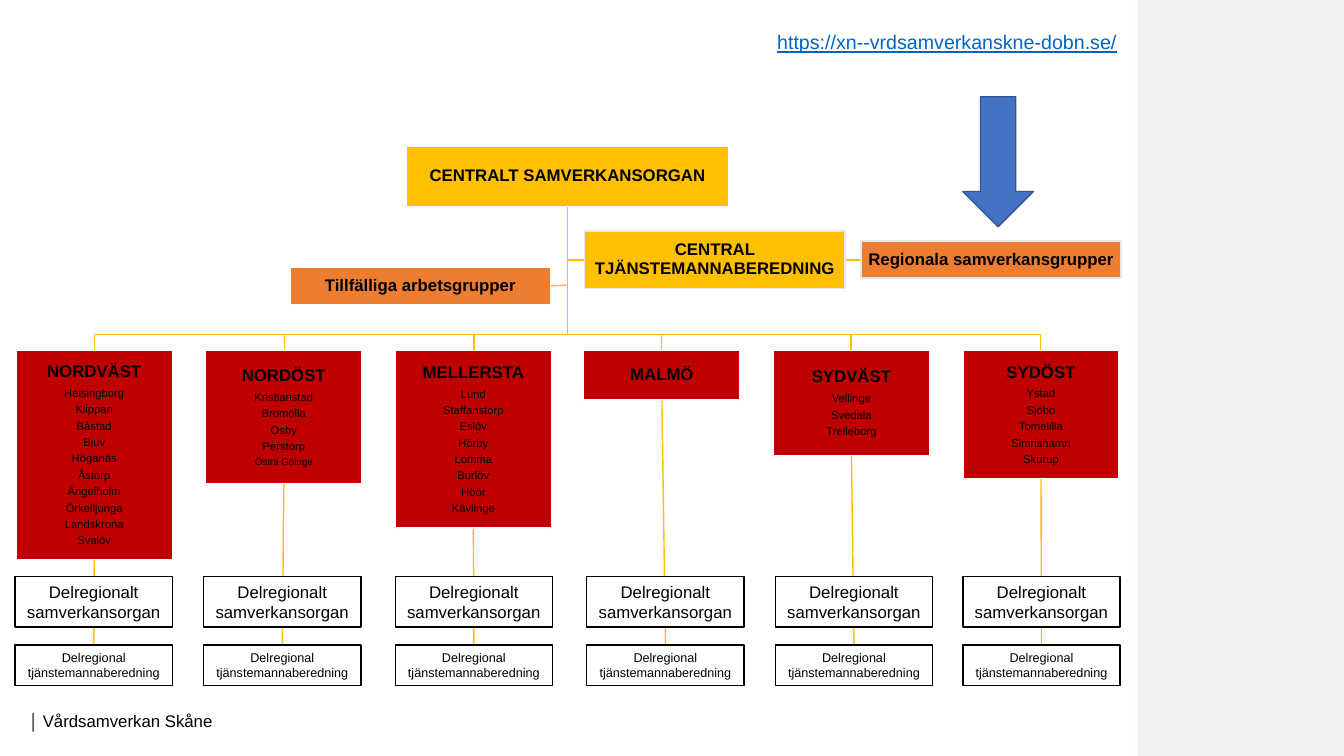
from lxml import etree
from pptx import Presentation
from pptx.dml.color import RGBColor
from pptx.enum.shapes import MSO_CONNECTOR, MSO_SHAPE
from pptx.enum.text import MSO_ANCHOR, MSO_AUTO_SIZE, PP_ALIGN
from pptx.oxml import parse_xml
from pptx.oxml.ns import nsdecls, qn
from pptx.util import Pt

PX = 9144
BLACK = RGBColor(0x00, 0x00, 0x00)
WHITE = RGBColor(0xFF, 0xFF, 0xFF)
PALE = RGBColor(0xE7, 0xE7, 0xE7)
PANEL = RGBColor(0xF2, 0xF2, 0xF2)
YELLOW = RGBColor(0xFF, 0xC0, 0x00)
ORANGE = RGBColor(0xED, 0x7D, 0x31)
RED = RGBColor(0xC0, 0x00, 0x00)
BLUE = RGBColor(0x44, 0x72, 0xC4)
DARK_BLUE = RGBColor(0x32, 0x54, 0x91)
LINK = RGBColor(0x05, 0x63, 0xC1)

REGIONS = [
    ("NORDVÄST", 207, 15, ["Helsingborg", "Klippan", "Båstad", "Bjuv", "Höganäs", "Åstorp",
                           "Ängelholm", "Örkelljunga", "Landskrona", "Svalöv"]),
    ("NORDÖST", 132, 202, ["Kristianstad", "Bromölla", "Osby", "Perstorp", "Östra Göinge"]),
    ("MELLERSTA", 176, 392, ["Lund", "Staffanstorp", "Eslöv", "Hörby", "Lomma", "Burlöv",
                             "Höör", "Kävlinge"]),
    ("MALMÖ", 49, 582, []),
    ("SYDVÄST", 104, 769, ["Vellinge", "Svedala", "Trelleborg"]),
    ("SYDÖST", 127, 955, ["Ystad", "Sjöbo", "Tomelilla", "Simrishamn", "Skurup"]),
]
SMALL_NAMES = {"Östra Göinge": 7}
CENTRAL_UNITS = [
    ("CENTRALT SAMVERKANSORGAN", (403, 145, 320, 60), YELLOW, WHITE),
    ("CENTRAL TJÄNSTEMANNABEREDNING", (580, 229, 258, 57), YELLOW, PALE),
    ("Regionala samverkansgrupper", (854, 239, 258, 37), ORANGE, PALE),
]
WORKGROUPS = ("Tillfälliga arbetsgrupper", (288, 265, 258, 37), ORANGE, WHITE)
LOCAL_LEVELS = [
    ("Delregionalt samverkansorgan", 572, 50, 12),
    ("Delregional tjänstemannaberedning", 640, 40, 9),
]
LOCAL_WIDTH = 156
REGION_LEFT, REGION_STEP, REGION_TOP, REGION_WIDTH = 16, 187.8, 348, 155
TRUNK_X, TRUNK_TOP, STAFF_Y, BUS_Y = 563, 205, 258, 332
FOOTER = [("│", {"size": Pt(11), "bold": True}), (" ", {"size": Pt(10.5)}),
          ("Vårdsamverkan Skåne", {"size": Pt(12)})]
ADDRESS = [("https://xn--vrdsamverkanskne-dobn.se/", {"size": Pt(14), "underline": True})]

UNIT_FRAME = dict.fromkeys(("margin_left", "margin_right", "margin_top", "margin_bottom"), PX)
UNIT_FRAME["vertical_anchor"] = MSO_ANCHOR.MIDDLE
GROWING_FRAME = {"vertical_anchor": MSO_ANCHOR.TOP,
                 "auto_size": MSO_AUTO_SIZE.SHAPE_TO_FIT_TEXT}
CENTERED = {"alignment": PP_ALIGN.CENTER}

prs = Presentation()
prs.slide_width, prs.slide_height = 1333 * PX, 750 * PX
slide = prs.slides.add_slide(prs.slide_layouts[6])


def apply(target, formats):
    for key, value in formats.items():
        setattr(target, key, value)


def emu(lengths):
    return [round(length * PX) for length in lengths]


def paint_line(item, color):
    item.line.color.rgb = color
    item.line.width = Pt(1)


def add_box(kind, place, fill, line=None):
    box = slide.shapes.add_shape(kind, *emu(place))
    box.shadow.inherit = False
    box.fill.solid()
    box.fill.fore_color.rgb = fill
    if line is None:
        box.line.fill.background()
    else:
        paint_line(box, line)
    return box


def write(box, paragraphs, frame_format, color=BLACK):
    frame = box.text_frame
    frame.word_wrap = True
    apply(frame, frame_format)
    for index, (runs, paragraph_format) in enumerate(paragraphs):
        paragraph = frame.add_paragraph() if index else frame.paragraphs[0]
        apply(paragraph, paragraph_format)
        for words, font_format in runs:
            run = paragraph.add_run()
            run.text = words
            apply(run.font, {"name": "Arial", **font_format})
            run.font.color.rgb = color


def unit_line(words, size, bold):
    spacing = {**CENTERED, "line_spacing": 0.9, "space_after": Pt(round(size * 0.39, 1))}
    return [(words, {"size": Pt(size), "bold": bold})], spacing


def add_unit(name, place, fill, line, members=()):
    unit = add_box(MSO_SHAPE.RECTANGLE, place, fill, line)
    lines = [unit_line(name, 12, True)]
    lines += [unit_line(member, SMALL_NAMES.get(member, 8), False) for member in members]
    write(unit, lines, UNIT_FRAME)
    return unit


def add_link_line(start, end):
    link = slide.shapes.add_connector(MSO_CONNECTOR.STRAIGHT, *emu(start + end))
    paint_line(link, YELLOW)
    etree.SubElement(link._element.spPr, qn("a:effectLst"))
    return link


def add_branch(points):
    builder = slide.shapes.build_freeform(TRUNK_X, TRUNK_TOP, scale=PX)
    builder.add_line_segments(points, close=False)
    branch = builder.convert_to_shape()
    branch.shadow.inherit = False
    branch.fill.background()
    paint_line(branch, YELLOW)


side_panel = add_box(MSO_SHAPE.RECTANGLE, (1130, -10, 204, 767), PANEL)
side_panel._element.spPr.find(qn("a:effectLst")).append(parse_xml(
    f'<a:outerShdw {nsdecls("a")} blurRad="50800" dist="0" dir="5400000">'
    '<a:srgbClr val="000000"><a:alpha val="11000"/></a:srgbClr></a:outerShdw>'))
footer = slide.shapes.add_textbox(*emu((19, 695, 300, 40)))
write(footer, [(FOOTER, {})], {"vertical_anchor": MSO_ANCHOR.MIDDLE})

workgroup_link = add_link_line((546, 283), (TRUNK_X, 283))
region_links = [add_link_line((left + LOCAL_WIDTH / 2, REGION_TOP + height),
                              (left + LOCAL_WIDTH / 2, LOCAL_LEVELS[-1][1]))
                for _, height, left, _ in REGIONS]

for _, place, _, _ in reversed(CENTRAL_UNITS[1:]):
    add_branch([(TRUNK_X, STAFF_Y), (place[0], STAFF_Y)])
region_lefts = [round(REGION_LEFT + REGION_STEP * i) for i in range(len(REGIONS))]
for left in region_lefts:
    center = left + REGION_WIDTH / 2
    add_branch([(TRUNK_X, BUS_Y), (center, BUS_Y), (center, REGION_TOP)])

for central_unit in CENTRAL_UNITS:
    add_unit(*central_unit)
workgroup_link.begin_connect(add_unit(*WORKGROUPS), 3)

for (name, height, local_left, members), left, link in zip(REGIONS, region_lefts, region_links):
    region = add_unit(name, (left, REGION_TOP, REGION_WIDTH, height), RED, WHITE, members)
    link.begin_connect(region, 2)
    for words, top, local_height, size in LOCAL_LEVELS:
        local = add_box(MSO_SHAPE.RECTANGLE, (local_left, top, LOCAL_WIDTH, local_height),
                        WHITE, BLACK)
        write(local, [([(words, {"size": Pt(size)})], CENTERED)], GROWING_FRAME)
    link.end_connect(local, 0)

address = slide.shapes.add_textbox(*emu((761, 25, 471, 34)))
write(address, [(ADDRESS, {})], GROWING_FRAME, LINK)
add_box(MSO_SHAPE.DOWN_ARROW, (955, 96, 70, 129), BLUE, DARK_BLUE)

prs.save("out.pptx")
